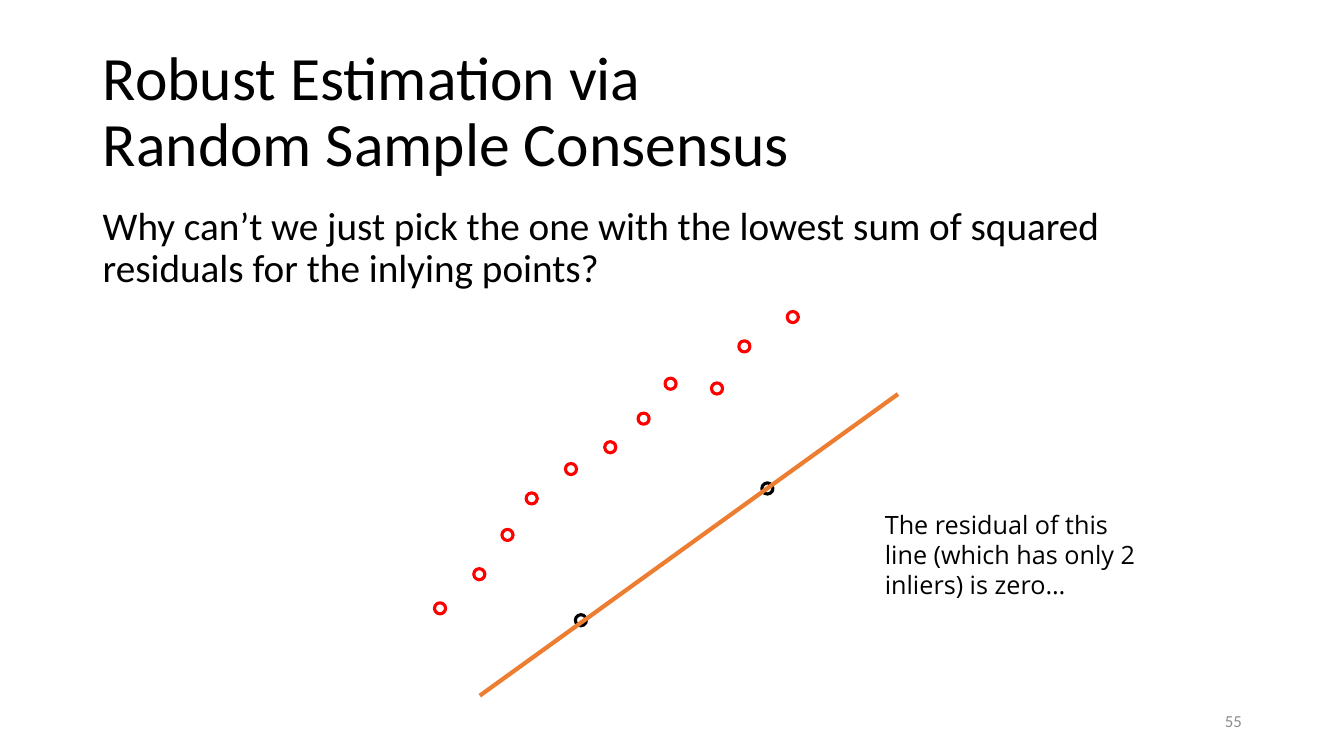
from pptx import Presentation
from pptx.dml.color import RGBColor
from pptx.enum.shapes import MSO_CONNECTOR, MSO_SHAPE
from pptx.enum.text import MSO_ANCHOR, MSO_AUTO_SIZE, PP_ALIGN
from pptx.oxml.ns import qn
from pptx.util import Cm, Pt
from lxml import etree

BLACK = RGBColor(0x00, 0x00, 0x00)
GREY = RGBColor(0x8C, 0x8C, 0x8C)
RED = RGBColor(0xFF, 0x00, 0x00)
ORANGE = RGBColor(0xED, 0x7D, 0x31)
DOT_SIZE = Cm(0.28)

prs = Presentation()
prs.slide_width, prs.slide_height = Cm(33.87), Cm(19.05)
s = prs.slides.add_slide(prs.slide_layouts[5])


def write_text(sp, box, text, font, color=BLACK, frame=None, paragraph=None):
    """Place a text shape and apply dicts of font, frame and paragraph values."""
    sp.left, sp.top, sp.width, sp.height = (Cm(v) for v in box)
    tf = sp.text_frame
    tf.text = text
    p = tf.paragraphs[0]
    settings = (
        (tf, {"word_wrap": True, "auto_size": MSO_AUTO_SIZE.NONE, **(frame or {})}),
        (p, {"alignment": PP_ALIGN.LEFT, **(paragraph or {})}),
    )
    for target, values in settings:
        for name, value in values.items():
            setattr(target, name, value)
    for r in p.runs:
        r.font.name, r.font.size = font
        r.font.color.rgb = color


def add_text_box():
    return s.shapes.add_textbox(0, 0, 0, 0)


write_text(s.shapes.title, (2.34, 1.02, 29.21, 3.68),
           "Robust Estimation via \vRandom Sample Consensus", ("Calibri", Pt(44)),
           frame={"vertical_anchor": MSO_ANCHOR.MIDDLE}, paragraph={"line_spacing": 0.9})
write_text(add_text_box(), (2.34, 5.08, 29.21, 12.1),
           "Why can’t we just pick the one with the lowest sum of squared "
           "residuals for the inlying points?", ("Calibri", Pt(28)),
           paragraph={"line_spacing": 0.9})
write_text(add_text_box(), (23.93, 17.65, 7.62, 1.02), "55", ("Calibri", Pt(12)), GREY,
           frame={"vertical_anchor": MSO_ANCHOR.MIDDLE},
           paragraph={"alignment": PP_ALIGN.RIGHT})

# Left and top of each data point, in cm
curve_points = [
    (10.95, 15.19), (11.94, 14.33), (12.65, 13.34), (13.26, 12.42),
    (14.25, 11.68), (15.24, 11.13), (16.08, 10.41), (16.76, 9.53),
    (17.93, 9.65), (18.62, 8.59), (19.84, 7.85),
]
line_inliers = [(14.5, 15.49), (19.2, 12.17)]
for color, points in ((RED, curve_points), (BLACK, line_inliers)):
    for left, top in points:
        dot = s.shapes.add_shape(MSO_SHAPE.OVAL, Cm(left), Cm(top), DOT_SIZE, DOT_SIZE)
        dot.shadow.inherit = False
        dot.fill.background()
        dot.line.color.rgb = color
        dot.line.width = Pt(2.25)

fit_line = s.shapes.add_connector(MSO_CONNECTOR.STRAIGHT,
                                  Cm(12.09), Cm(17.53), Cm(22.63), Cm(9.93))
fit_line.line.color.rgb = ORANGE
fit_line.line.width = Pt(3)
etree.SubElement(fit_line._element.spPr, qn("a:effectLst"))

write_text(add_text_box(), (22.05, 12.7, 7.14, 2.57),
           "The residual of this line (which has only 2 inliers) is zero…",
           ("Open Sans", Pt(18)), frame={"auto_size": MSO_AUTO_SIZE.SHAPE_TO_FIT_TEXT})

prs.save("out.pptx")
